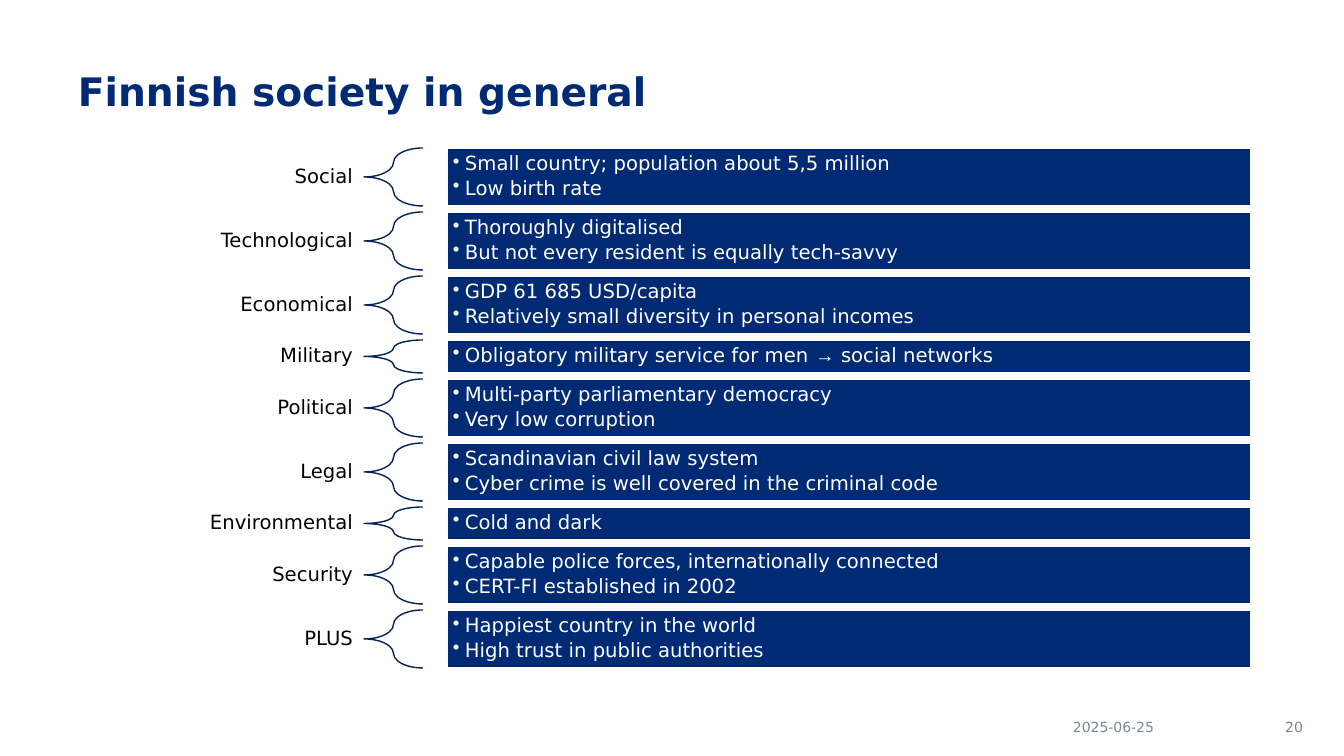
"""Build the slide that sums up Finnish society theme by theme."""
from lxml import etree
from pptx import Presentation
from pptx import util as u
from pptx.dml.color import RGBColor
from pptx.enum import shapes, text
from pptx.oxml.ns import qn

PX = 914400 / 100.8
NAVY, BRACE_NAVY, WHITE, BLACK, GREY = "002B74", "00225D", "FFFFFF", "000000", "7C878E"
ALIGN, ANCHOR = text.PP_ALIGN, text.MSO_ANCHOR


def px(*lengths):
    return [u.Emu(round(length * PX)) for length in lengths]


def write(frame, lines, size=14, color=BLACK, bold=False, align=ALIGN.LEFT,
          anchor=ANCHOR.MIDDLE, insets=(10, 5), spacing=0.9, after=0, bullet=False):
    frame.word_wrap = True
    frame.auto_size = text.MSO_AUTO_SIZE.NONE
    frame.vertical_anchor = anchor
    frame.margin_left, frame.margin_top = frame.margin_right, frame.margin_bottom = px(*insets)
    for index, line in enumerate(lines):
        para = frame.add_paragraph() if index else frame.paragraphs[0]
        para.alignment, para.line_spacing = align, spacing
        para.space_before, para.space_after = u.Pt(0), u.Pt(after)
        if bullet:
            props = para._p.get_or_add_pPr()
            indent, = px(12)
            props.set("marL", str(indent))
            props.set("indent", str(-indent))
            etree.SubElement(props, qn("a:buChar"), char="•")
        for part in filter(None, line.partition("→")):
            span = para.add_run()
            span.text = part
            span.font.name = "Arial" if part == "→" else "DejaVu Sans"
            span.font.size, span.font.bold = u.Pt(size), bold
            span.font.color.rgb = RGBColor.from_string(color)


themes = [
    ("Social", ["Small country; population about 5,5 million", "Low birth rate"]),
    ("Technological", ["Thoroughly digitalised",
                       "But not every resident is equally tech-savvy"]),
    ("Economical", ["GDP 61 685 USD/capita",
                    "Relatively small diversity in personal incomes"]),
    ("Military", ["Obligatory military service for men → social networks"]),
    ("Political", ["Multi-party parliamentary democracy", "Very low corruption"]),
    ("Legal", ["Scandinavian civil law system",
               "Cyber crime is well covered in the criminal code"]),
    ("Environmental", ["Cold and dark"]),
    ("Security", ["Capable police forces, internationally connected",
                  "CERT-FI established in 2002"]),
    ("PLUS", ["Happiest country in the world", "High trust in public authorities"]),
]

deck = Presentation()
deck.slide_width, deck.slide_height = px(1344, 756)
page = deck.slides.add_slide(deck.slide_layouts[5])

title = page.shapes.title
title.left, title.top, title.width, title.height = px(68, 68, 1184, 122)
write(title.text_frame, ["Finnish society in general"], size=28, color=NAVY, bold=True,
      anchor=ANCHOR.TOP)

row_top, row_gap = 148, 6
row_heights = {1: 33, 2: 58}
for theme, facts in themes:
    height = row_heights[len(facts)]
    label = page.shapes.add_textbox(*px(68, row_top + height / 2 - 15, 296, 30))
    write(label.text_frame, [theme], align=ALIGN.RIGHT, insets=(11, 4))

    brace = page.shapes.add_shape(shapes.MSO_SHAPE.LEFT_BRACE, *px(364, row_top, 59, height))
    brace.adjustments[0], brace.adjustments[1] = 0.35, 0.5
    brace.fill.background()
    bar = page.shapes.add_shape(shapes.MSO_SHAPE.RECTANGLE, *px(447, row_top, 804, height))
    bar.fill.solid()
    bar.fill.fore_color.rgb = RGBColor.from_string(NAVY)
    for shape, line_color in ((brace, BRACE_NAVY), (bar, WHITE)):
        shape.shadow.inherit = False
        shape.line.color.rgb = RGBColor.from_string(line_color)
        shape.line.width = u.Pt(1)
    write(bar.text_frame, facts, color=WHITE, insets=(6, 6), after=2.5, bullet=True)
    row_top += height + row_gap

for left, width, footer, align in ((1010, 207, "2025-06-25", ALIGN.CENTER),
                                   (1246, 67, "20", ALIGN.RIGHT)):
    box = page.shapes.add_textbox(*px(left, 713, width, 28))
    write(box.text_frame, [footer], size=10, color=GREY, align=align, spacing=1.0)

deck.save("out.pptx")
